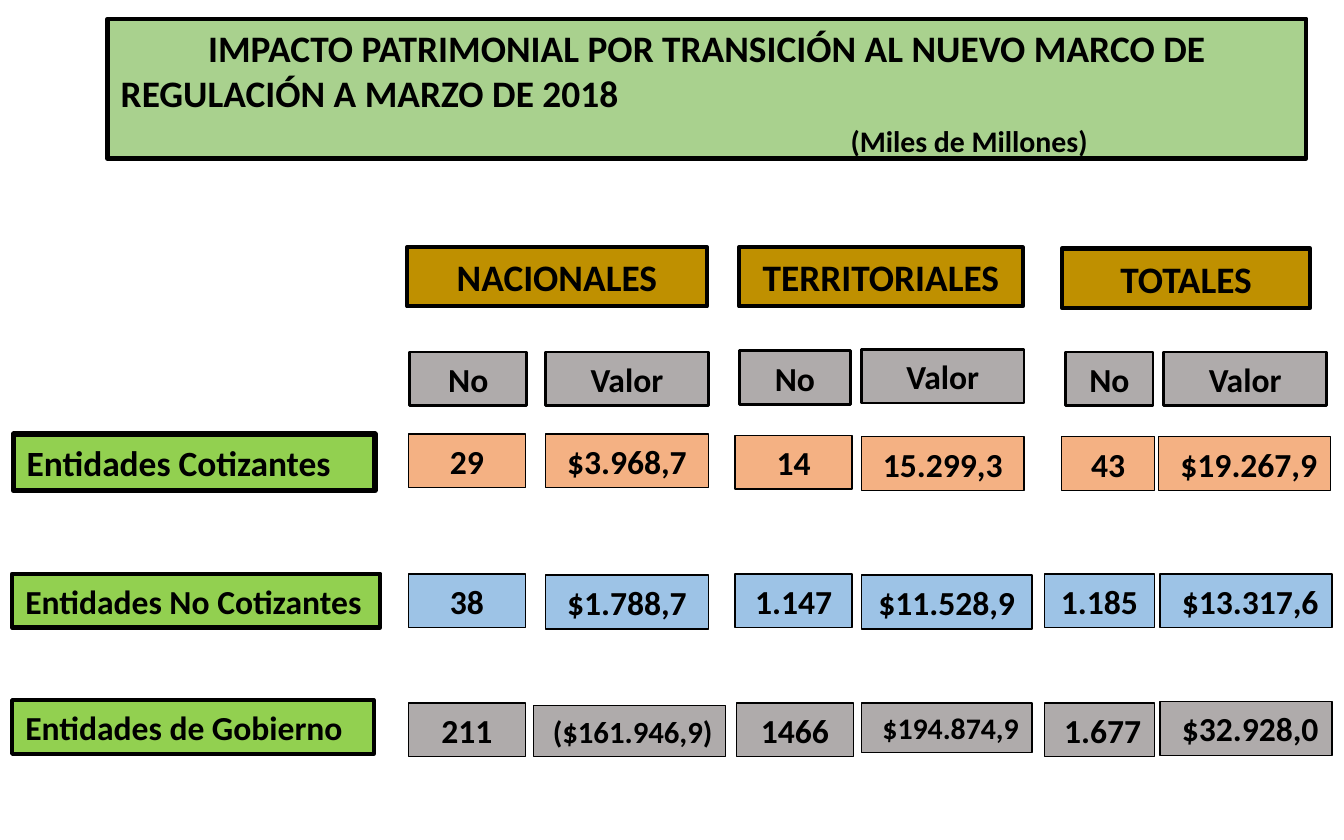
from pptx import Presentation
from pptx.dml.color import RGBColor
from pptx.enum.shapes import MSO_SHAPE
from pptx.enum.text import MSO_ANCHOR, PP_ALIGN
from pptx.util import Inches, Pt

FONT = "Calibri"
BLACK = "000000"
GREY = "AFABAB"
LEFT, CENTER, RIGHT = PP_ALIGN.LEFT, PP_ALIGN.CENTER, PP_ALIGN.RIGHT


def color(value):
    return RGBColor.from_string(value)


def style_para(para, text, size, align):
    para.text = text
    para.alignment = align
    para.font.name = FONT
    para.font.size = Pt(size)
    para.font.bold = True
    para.font.color.rgb = color(BLACK)


def add_box(page, box, fill, line_width, text, size=18, align=CENTER):
    shape = page.shapes.add_shape(MSO_SHAPE.RECTANGLE, *map(Inches, box))
    shape.shadow.inherit = False
    shape.fill.solid()
    shape.fill.fore_color.rgb = color(fill)
    shape.line.color.rgb = color(BLACK)
    shape.line.width = Pt(line_width)
    frame = shape.text_frame
    frame.word_wrap = True
    frame.vertical_anchor = MSO_ANCHOR.MIDDLE
    style_para(frame.paragraphs[0], text, size, align)
    return shape


def add_title(page, box):
    heading = "IMPACTO PATRIMONIAL POR TRANSICIÓN AL NUEVO MARCO DE REGULACIÓN A MARZO DE 2018"
    frame = add_box(page, box, "A9D18E", 2.25, heading, 20, LEFT).text_frame
    frame.vertical_anchor = MSO_ANCHOR.TOP
    # First line is indented, the unit note sits to the right
    frame.paragraphs[0]._p.get_or_add_pPr().set("indent", str(Inches(0.65)))
    unit = frame.add_paragraph()
    style_para(unit, "(Miles de Millones)", 16, LEFT)
    unit.space_before = Pt(4)
    unit._p.get_or_add_pPr().set("marL", str(Inches(5.43)))


def add_row(page, box, fill, line_width, cells):
    """Each cell: text, x and y offset, width, then optional size, align, height."""
    left, top, height = box
    for text, x, y, width, *options in cells:
        size, align, cell_height = options + [18, CENTER, height][len(options):]
        add_box(page, (left + x, top + y, width, cell_height),
                fill, line_width, text, size, align)


def add_label(page, box, text, size=18, line_width=2.25):
    add_box(page, box, "92D050", line_width, text, size, LEFT)


def main():
    deck = Presentation()
    deck.slide_width, deck.slide_height = Inches(10), Inches(6.25)
    page = deck.slides.add_slide(deck.slide_layouts[6])
    grid_left = 3.04

    add_title(page, (0.8, 0.14, 8.92, 1.04))

    # Entity labels
    add_label(page, (0.1, 3.23, 2.69, 0.42), "Entidades Cotizantes", 19, 3)
    add_label(page, (0.09, 4.27, 2.74, 0.4), "Entidades No Cotizantes")
    add_label(page, (0.09, 5.21, 2.69, 0.4), "Entidades de Gobierno")

    # Column groups
    add_row(page, (grid_left, 1.84, 0.44), "BF9000", 2.25, [
        ("NACIONALES", -0.01, 0, 2.23, 20),
        ("TERRITORIALES", 2.46, 0, 2.11, 20),
        ("TOTALES", 4.86, 0.01, 1.85, 20),
    ])

    # Column headings
    add_row(page, (grid_left, 2.62, 0.4), GREY, 1.5, [
        ("No", 0.01, 0, 0.87), ("Valor", 1.02, 0, 1.21),
        ("No", 2.46, -0.01, 0.83), ("Valor", 3.37, -0.02, 1.21),
        ("No", 4.89, 0, 0.65), ("Valor", 5.62, 0, 1.21),
    ])

    # Entidades Cotizantes
    add_row(page, (grid_left, 3.23, 0.4), "F4B183", 0.75, [
        ("29", 0, 0, 0.87), ("$3.968,7", 1.02, 0, 1.21),
        ("14", 2.43, 0.01, 0.87), ("15.299,3", 3.37, 0.02, 1.21),
        ("43", 4.86, 0.02, 0.69), ("$19.267,9", 5.58, 0.02, 1.28, 18, RIGHT),
    ])

    # Entidades No Cotizantes
    add_row(page, (grid_left, 4.27, 0.4), "9DC3E6", 0.75, [
        ("38", 0, 0, 0.87), ("$1.788,7", 1.02, 0.01, 1.21),
        ("1.147", 2.43, 0, 0.87), ("$11.528,9", 3.37, 0.01, 1.27),
        ("1.185", 4.73, 0, 0.82), ("$13.317,6", 5.59, 0, 1.28, 18, RIGHT),
    ])

    # Entidades de Gobierno
    add_row(page, (grid_left, 5.23, 0.4), GREY, 0.75, [
        ("211", 0, 0, 0.87), ("($161.946,9)", 0.93, 0.02, 1.43, 16.5, RIGHT, 0.38),
        ("1466", 2.44, 0, 0.87), ("$194.874,9", 3.37, 0, 1.27, 16, RIGHT, 0.37),
        ("1.677", 4.73, 0, 0.82, 18, RIGHT),
        ("$32.928,0", 5.59, -0.01, 1.28, 18, RIGHT),
    ])

    deck.save("out.pptx")


if __name__ == "__main__":
    main()
